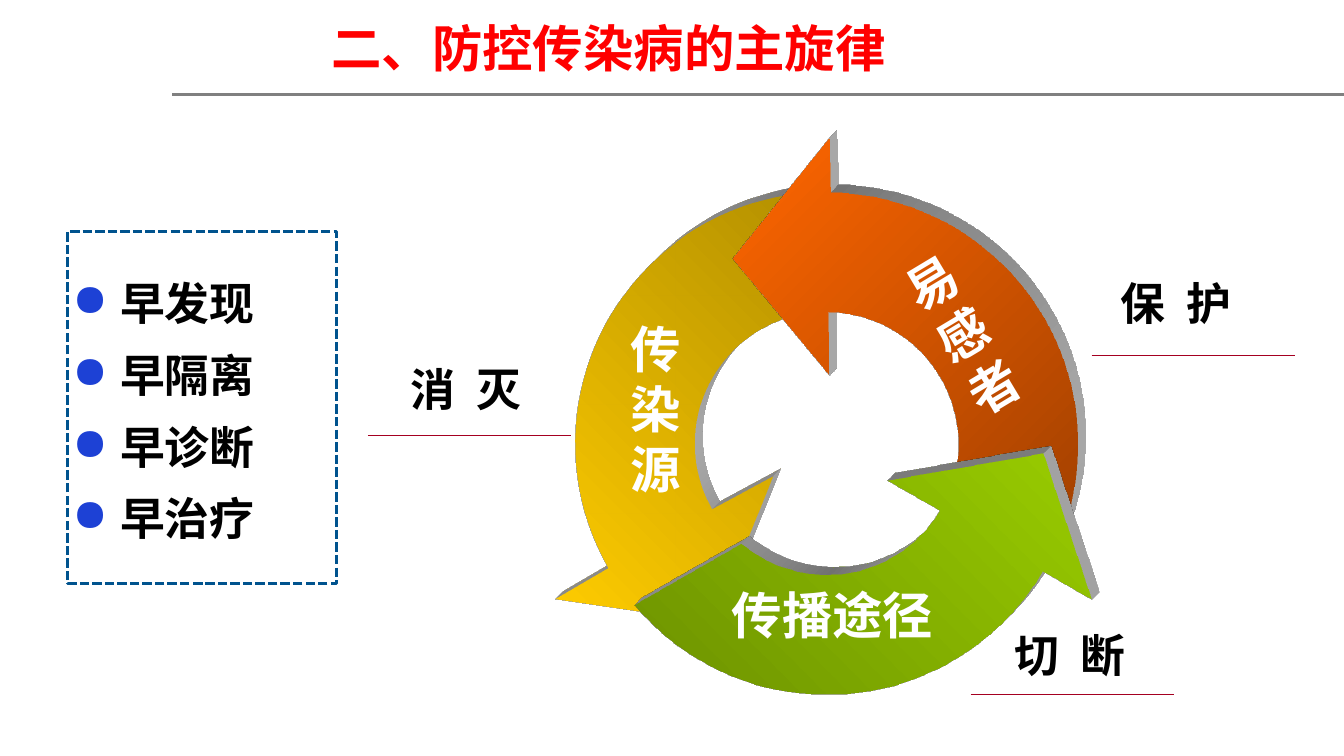
"""Build a slide on the three links of infection control, drawn as a ring of arrows."""
from dataclasses import dataclass
from math import cos, radians, sin

from lxml import etree
from pptx import Presentation
from pptx import util as u
from pptx.dml.color import RGBColor
from pptx.enum import dml, shapes, text
from pptx.oxml import ns


@dataclass(frozen=True)
class Theme:
    """Colours, fonts and type sizes of the slide."""
    sans: str = "Noto Sans CJK SC"
    serif: str = "Times New Roman"
    title: str = "FF0000"
    rule: str = "808080"
    accent: str = "A50021"
    frame: str = "00538E"
    bullet: str = "1D41D5"
    side: str = "BFBFBF"
    ink: str = "000000"
    white: str = "FFFFFF"
    large: int = 36
    medium: int = 32


class SlideBuilder:
    """Draws styled elements on one slide, with lengths in points."""

    def __init__(self, slide, theme):
        """Keep the slide and its theme."""
        self.slide = slide
        self.theme = theme

    def add_xml(self, parent, tag, **attributes):
        """Append a drawing element and return it."""
        return etree.SubElement(parent, ns.qn(tag), attributes)

    def place(self, shape, box):
        """Move and size a shape."""
        shape.left, shape.top, shape.width, shape.height = map(u.Pt, box)

    def format_runs(self, paragraph, size, color, latin=None, spacing=0):
        """Style every run of a paragraph."""
        for run in paragraph.runs:
            run.font.size = u.Pt(size)
            run.font.bold = True
            run.font.color.rgb = RGBColor.from_string(color)
            run.font.name = latin or self.theme.sans
            properties = run.font._element
            if spacing:
                properties.set("spc", str(spacing * 100))
            east_asian = self.add_xml(properties, "a:ea", typeface=self.theme.sans)
            properties.find(ns.qn("a:latin")).addnext(east_asian)

    def title(self, words, box, indent):
        """Fill and format the title placeholder."""
        shape = self.slide.shapes.title
        self.place(shape, box)
        frame = shape.text_frame
        frame.text = words
        frame.margin_left = u.Pt(indent)
        frame.vertical_anchor = text.MSO_ANCHOR.MIDDLE
        frame.paragraphs[0].alignment = text.PP_ALIGN.LEFT
        self.format_runs(frame.paragraphs[0], self.theme.large, self.theme.title)

    def line(self, left, right, y, color, width):
        """Draw a horizontal line."""
        connector = self.slide.shapes.add_connector(
            shapes.MSO_CONNECTOR.STRAIGHT, u.Pt(left), u.Pt(y), u.Pt(right), u.Pt(y))
        connector.line.color.rgb = RGBColor.from_string(color)
        connector.line.width = u.Pt(width)
        self.add_xml(connector._element.spPr, "a:effectLst")

    def label(self, words, box, size, color, rotation=0, spacing=0, pitch=None):
        """Write a bold label in a text box."""
        shape = self.slide.shapes.add_textbox(*map(u.Pt, box))
        shape.rotation = rotation
        frame = shape.text_frame
        frame.word_wrap = True
        frame.vertical_anchor = text.MSO_ANCHOR.MIDDLE
        frame.text = words
        if pitch:
            frame.paragraphs[0].line_spacing = u.Pt(pitch)
        self.format_runs(frame.paragraphs[0], size, color, spacing=spacing)

    def bullet_box(self, items, box, indent):
        """Draw a dashed frame that holds a bulleted list."""
        shape = self.slide.shapes.add_shape(shapes.MSO_SHAPE.RECTANGLE, *map(u.Pt, box))
        shape.shadow.inherit = False
        shape.fill.background()
        shape.line.color.rgb = RGBColor.from_string(self.theme.frame)
        shape.line.width = u.Pt(2.25)
        shape.line.dash_style = dml.MSO_LINE.SQUARE_DOT
        frame = shape.text_frame
        frame.margin_left = frame.margin_right = u.Pt(3.6)
        frame.vertical_anchor = text.MSO_ANCHOR.MIDDLE
        frame.text = "\n".join(items)
        for index, paragraph in enumerate(frame.paragraphs):
            properties = paragraph._p.get_or_add_pPr()
            properties.set("marL", str(u.Pt(indent)))
            properties.set("indent", str(-u.Pt(indent)))
            color = self.add_xml(properties, "a:buClr")
            self.add_xml(color, "a:srgbClr", val=self.theme.bullet)
            self.add_xml(properties, "a:buChar", char="●")
            paragraph.alignment = text.PP_ALIGN.LEFT
            paragraph.line_spacing = 1.1
            paragraph.space_before = u.Pt(9 if index else 0)
            self.format_runs(paragraph, self.theme.medium, self.theme.ink, self.theme.serif)

    def ring_arrow(self, points, colors, angle):
        """Draw a closed outline with a gradient and a raised edge."""
        (x, y), *rest = [(u.Pt(x), u.Pt(y)) for x, y in points]
        builder = self.slide.shapes.build_freeform(x, y)
        builder.add_line_segments(rest, close=True)
        shape = builder.convert_to_shape()
        shape.shadow.inherit = False
        shape.line.fill.background()
        shape.fill.gradient()
        shape.fill.gradient_angle = angle
        for stop, color, position in zip(shape.fill.gradient_stops, colors, (0, 1)):
            stop.color.rgb = RGBColor.from_string(color)
            stop.position = position
        properties = shape._element.spPr
        scene = self.add_xml(properties, "a:scene3d")
        self.add_xml(scene, "a:camera", prst="legacyObliqueTopRight")
        self.add_xml(scene, "a:lightRig", rig="legacyFlat3", dir="b")
        solid = self.add_xml(properties, "a:sp3d", extrusionH="201600", prstMaterial="legacyMatte")
        edge = self.add_xml(solid, "a:extrusionClr")
        self.add_xml(edge, "a:srgbClr", val=self.theme.side)


def arc(radius, start, end, steps=40):
    """Return points on a circle about the centre of the ring."""
    angles = [radians(start + (end - start) * step / steps) for step in range(steps + 1)]
    return [(590.4 + radius * cos(a), 316.6 + radius * sin(a)) for a in angles]


def main():
    """Compose and save the slide."""
    presentation = Presentation()
    presentation.slide_width, presentation.slide_height = u.Pt(960), u.Pt(540)
    theme = Theme()
    builder = SlideBuilder(presentation.slides.add_slide(presentation.slide_layouts[5]), theme)
    builder.line(123, 960, 67.7, theme.rule, 2)
    builder.title("二、防控传染病的主旋律", (106.6, 8.6, 684, 51.1), 130)

    outer, inner = 179.5, 94
    source = (arc(outer, 261, 150.3) + [(396.7, 427.7), (510.5, 444.2), (552.2, 339.8)]
              + arc(inner, 150.3, 253))
    hosts = (arc(outer, -89, 19) + [(744.5, 325.4), (682.6, 335.5)]
             + arc(inner, 6, -89) + [(592.6, 267.8), (523.4, 184.3), (592.6, 97.9)])
    route = (arc(outer, 140, 30.7) + [(779.8, 428.4), (745.2, 324), (633.6, 343.4)]
             + arc(inner, 30.9, 130.3))
    builder.ring_arrow(source, ("FFCC00", "B69200"), 45)
    builder.ring_arrow(hosts, ("FF6600", "A44100"), 315)
    builder.ring_arrow(route, ("6D9200", "99CC00"), 45)
    for words, box, rotation in (
            ("传染源", (443.5, 222.5, 71.3, 139), 0),
            ("传播途径", (515.5, 413.3, 178.6, 51.1), 0),
            ("易感者", (661.7, 167, 59, 139), 329)):
        builder.label(words, box, theme.large, theme.white, rotation, pitch=43)

    for words, left, top, line_left, line_y in (
            ("消 灭", 285.8, 254.2, 262.8, 311),
            ("切 断", 717.8, 444.2, 693.4, 496),
            ("保 护", 793.4, 193, 779.8, 254.2)):
        builder.line(line_left, line_left + 145, line_y, theme.accent, 0.75)
        builder.label(words, (left, top, 99, 46.8), theme.medium, theme.ink, spacing=4)

    builder.bullet_box(("早发现", "早隔离", "早诊断", "早治疗"), (48.2, 165.6, 192.2, 251.3), 34)
    presentation.save("out.pptx")


if __name__ == "__main__":
    main()
